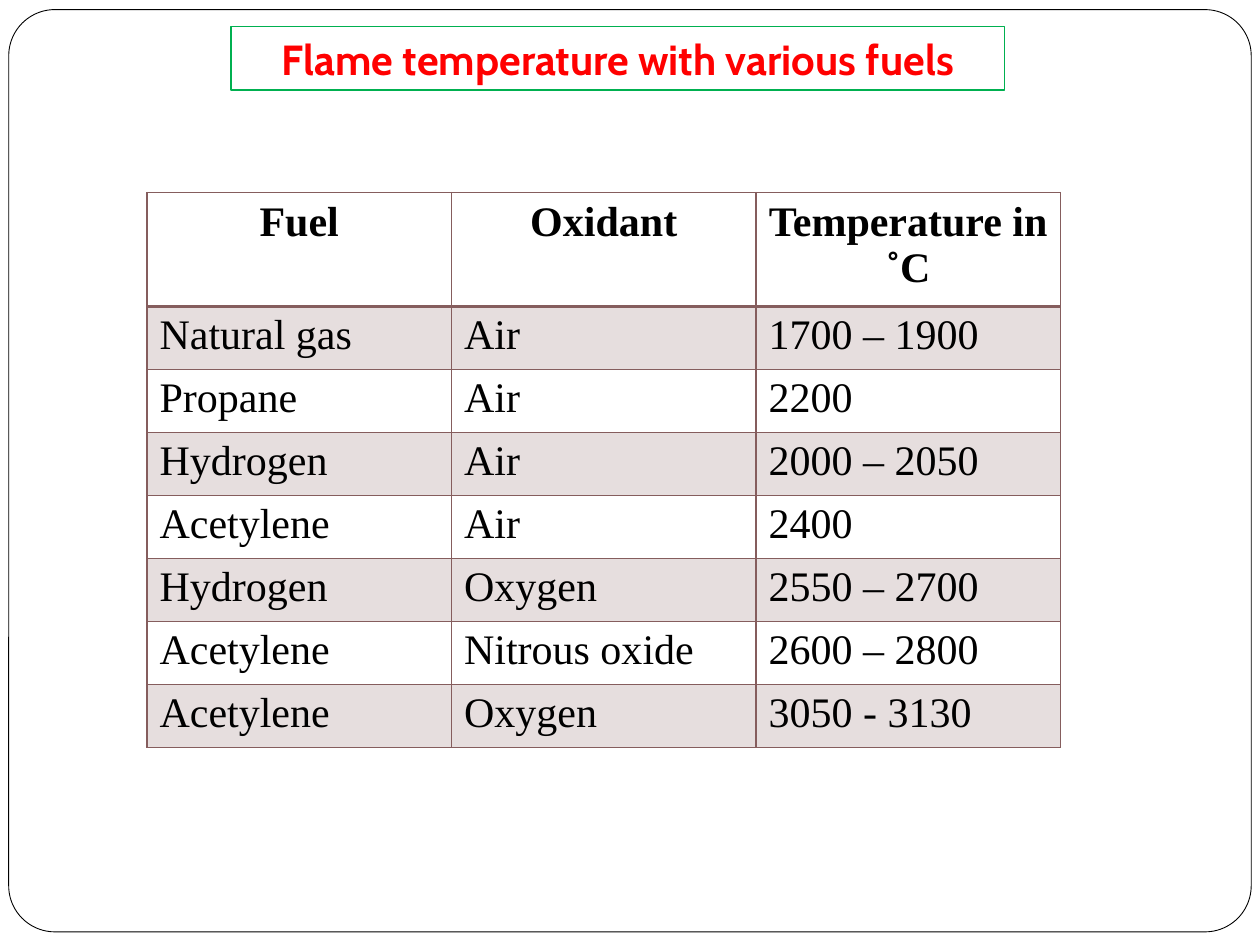
import lxml.etree
import pptx
import pptx.dml.color
import pptx.enum.shapes
import pptx.enum.text
import pptx.oxml.ns
import pptx.util

Pt = pptx.util.Pt
Align = pptx.enum.text.PP_ALIGN
qn = pptx.oxml.ns.qn

COLORS = {
    "paper": "FFFFFF",
    "ink": "000000",
    "title": "FF0000",
    "title_border": "00B050",
    "table": "855D5D",
}
ROWS = [
    ("Fuel", "Oxidant", "Temperature in ˚C"),
    ("Natural gas", "Air", "1700 – 1900"),
    ("Propane", "Air", "2200"),
    ("Hydrogen", "Air", "2000 – 2050"),
    ("Acetylene", "Air", "2400"),
    ("Hydrogen", "Oxygen", "2550 – 2700"),
    ("Acetylene", "Nitrous oxide", "2600 – 2800"),
    ("Acetylene", "Oxygen", "3050 - 3130"),
]
HEADER_HEIGHT, ROW_HEIGHT, COLUMN_WIDTH = 65, 36, 174


def color(name):
    return pptx.dml.color.RGBColor.from_string(COLORS[name])


def write(text, frame, font="Times New Roman", size=24, bold=False, ink="ink", align=Align.LEFT):
    para = frame.paragraphs[0]
    para.alignment = align
    span = para.add_run()
    span.text = text
    span.font.name = font
    span.font.size = Pt(size)
    span.font.bold = bold
    span.font.color.rgb = color(ink)


deck = pptx.Presentation()
deck.slide_width, deck.slide_height = Pt(720), Pt(540)
page = deck.slides.add_slide(deck.slide_layouts[5])

title = page.shapes.title
title.left, title.top, title.width, title.height = Pt(132), Pt(15), Pt(442), Pt(36.5)
title.line.color.rgb = color("title_border")
title.line.width = Pt(0.75)
title.text_frame.word_wrap = True
title.text_frame.auto_size = pptx.enum.text.MSO_AUTO_SIZE.NONE
title.text_frame.vertical_anchor = pptx.enum.text.MSO_ANCHOR.MIDDLE
write("Flame temperature with various fuels", title.text_frame,
      font="Cabin", bold=True, ink="title", align=Align.CENTER)

border = page.shapes.add_shape(
    pptx.enum.shapes.MSO_SHAPE.ROUNDED_RECTANGLE, Pt(5), Pt(5.5), Pt(710), Pt(527))
border.adjustments[0] = 0.05
border.shadow.inherit = False
border.fill.solid()
border.fill.fore_color.rgb = color("paper")
border.line.color.rgb = color("ink")
border.line.width = Pt(0.5)
title._element.addprevious(border._element)

table = page.shapes.add_table(
    len(ROWS), 3, Pt(84), Pt(110), Pt(3 * COLUMN_WIDTH),
    Pt(HEADER_HEIGHT + ROW_HEIGHT * (len(ROWS) - 1))).table
table.first_row = False
table.horz_banding = False
for column in table.columns:
    column.width = Pt(COLUMN_WIDTH)

for row_index, texts in enumerate(ROWS):
    header = row_index == 0
    table.rows[row_index].height = Pt(HEADER_HEIGHT if header else ROW_HEIGHT)
    for column_index, text in enumerate(texts):
        cell = table.cell(row_index, column_index)
        write(text, cell.text_frame, bold=header, align=Align.CENTER if header else Align.LEFT)
        properties = cell._tc.get_or_add_tcPr()
        if row_index % 2:
            cell.fill.solid()
            cell.fill.fore_color.rgb = color("table")
            tint = properties.find(qn("a:solidFill")).find(qn("a:srgbClr"))
            lxml.etree.SubElement(tint, qn("a:alpha"), val="20000")
        else:
            cell.fill.background()
        for position, side in enumerate(("lnL", "lnR", "lnT", "lnB")):
            thick = (row_index, side) in ((0, "lnB"), (1, "lnT"))
            line = lxml.etree.Element(qn("a:" + side), w=str(Pt(2 if thick else 1)))
            solid = lxml.etree.SubElement(line, qn("a:solidFill"))
            lxml.etree.SubElement(solid, qn("a:srgbClr"), val=COLORS["table"])
            properties.insert(position, line)

deck.save("out.pptx")
